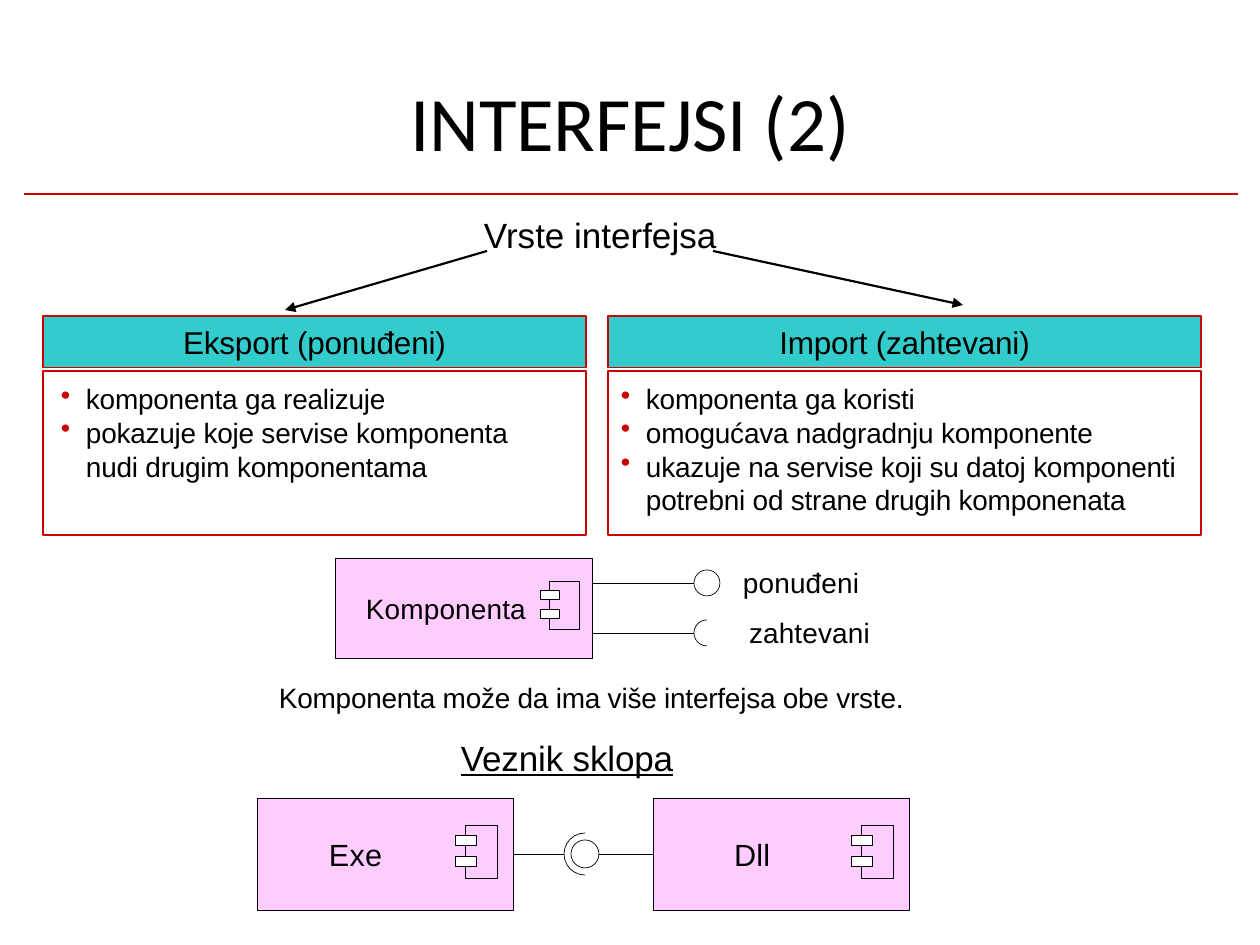
from dataclasses import dataclass

from lxml import etree
from pptx import Presentation, util as u
from pptx.dml.color import RGBColor
from pptx.enum import shapes, text
from pptx.oxml import ns

SHAPE = shapes.MSO_SHAPE
ALIGN = text.PP_ALIGN
ANCHOR = text.MSO_ANCHOR


@dataclass(frozen=True)
class Theme:
    """Colours, fonts and type sizes of the slide."""
    ink: str = "000000"
    red: str = "CC0000"
    teal: str = "33CCCC"
    pink: str = "FFCCFF"
    white: str = "FFFFFF"
    head_font: str = "Calibri"
    body_font: str = "Arial"
    title: float = 44
    subtitle: float = 20
    header: float = 18
    name: float = 17.5
    body: float = 16
    hair: float = 0.39
    frame: float = 0.72
    rule: float = 0.96
    arrow: float = 1.25


T = Theme()


def px(n):
    """Turn px into EMU."""
    return u.Emu(round(n * 914400 / 126))


def sub(parent, tag, **attrs):
    """Append a drawing element to an XML parent."""
    return etree.SubElement(parent, ns.qn(tag), attrs)


def write(sp, lines, size=T.body, font=T.body_font, align=ALIGN.LEFT, anchor=ANCHOR.TOP,
          inset=(0, 0, 0, 0), spacing=-0.1, underline=None, bullet=0, leading=None):
    """Fill a shape with formatted paragraphs."""
    tf = sp.text_frame
    tf.word_wrap = True
    tf.vertical_anchor = anchor
    tf.margin_left, tf.margin_top, tf.margin_right, tf.margin_bottom = map(px, inset)
    for i, line in enumerate(lines):
        p = tf.add_paragraph() if i else tf.paragraphs[0]
        p.alignment = align
        if leading:
            p.line_spacing = u.Pt(leading)
        if bullet:
            pPr = p._p.get_or_add_pPr()
            pPr.set("marL", str(px(bullet)))
            pPr.set("indent", str(-px(bullet)))
            sub(sub(pPr, "a:buClr"), "a:srgbClr", val=T.red)
            sub(pPr, "a:buChar", char="•")
        r = p.add_run()
        r.text = line
        r.font.size = u.Pt(size)
        r.font.name = font
        r.font.underline = underline
        r.font.color.rgb = RGBColor.from_string(T.ink)
        r._r.get_or_add_rPr().set("spc", str(round(spacing * 100)))


def label(s, box, line, **fmt):
    """Place a line of text in a box."""
    write(s.shapes.add_textbox(*map(px, box)), [line], **fmt)


def shape(s, kind, box, fill=None, line=T.ink, width=T.hair):
    """Place an outlined preset shape in a box."""
    sp = s.shapes.add_shape(kind, *map(px, box))
    sp.shadow.inherit = False
    if fill:
        sp.fill.solid()
        sp.fill.fore_color.rgb = RGBColor.from_string(fill)
    else:
        sp.fill.background()
    sp.line.color.rgb = RGBColor.from_string(line)
    sp.line.width = u.Pt(width)
    return sp


def connect(s, start, end, color=T.ink, width=T.hair, arrow=False):
    """Draw a straight connector between two points."""
    c = s.shapes.add_connector(shapes.MSO_CONNECTOR.STRAIGHT, *map(px, start + end))
    c.line.color.rgb = RGBColor.from_string(color)
    c.line.width = u.Pt(width)
    if arrow:
        sub(c.line._get_or_add_ln(), "a:tailEnd", type="triangle")
    sub(c._element.spPr, "a:effectLst")
    return c


def socket(s, box):
    """Draw the left half of a circle."""
    sp = shape(s, SHAPE.ARC, box)
    sp.adjustments[0], sp.adjustments[1] = 54, 162


def heading(s, box):
    """Place the slide title above its rule."""
    x, y, w, h = box
    label(s, (x + 39, y, w - 80, h - 27), "INTERFEJSI (2)", size=T.title, font=T.head_font,
          align=ALIGN.CENTER, anchor=ANCHOR.MIDDLE)
    connect(s, (x, y + h), (x + w, y + h), T.red, T.rule)


def kind_panel(s, box, title, items, inset):
    """Place a titled panel with a bulleted list."""
    x, y, w, h = box
    top = shape(s, SHAPE.RECTANGLE, (x, y, w, 52), T.teal, T.red, T.frame)
    write(top, [title], size=T.header, align=ALIGN.CENTER, anchor=ANCHOR.MIDDLE)
    body = shape(s, SHAPE.RECTANGLE, (x, y + 55, w, h - 55), None, T.red, T.frame)
    write(body, items, inset=inset, bullet=25, leading=19.2)


def icon(s, box):
    """Draw the component symbol."""
    x, y, w, h = box
    shape(s, SHAPE.RECTANGLE, (x + w // 4, y, w - w // 4, h))
    for fifth in (1, 3):
        shape(s, SHAPE.RECTANGLE, (x, y + h * fifth // 5, w // 2, h // 5), T.white)


def component(s, box, name, indent, symbol, size=T.name):
    """Place a named component with its symbol offset inside the box."""
    x, y, w, h = box
    dx, dy, iw, ih = symbol
    sp = shape(s, SHAPE.RECTANGLE, box, T.pink)
    write(sp, [name], size=size, anchor=ANCHOR.MIDDLE, inset=(indent, 0, 0, 0), spacing=0.1)
    icon(s, (x + dx, y + dy, iw, ih))
    return sp


def interfaces(s, box):
    """Place a component with a provided and a required interface."""
    x, y, w, h = box
    component(s, (x, y, 257, h), "Komponenta", 31, (205, 23, 39, 48), T.body)
    for dy, name, dx in ((25, "ponuđeni", 408), (75, "zahtevani", 414)):
        connect(s, (x + 257, y + dy), (x + 359, y + dy))
        end = (x + 359, y + dy - 13, 26, 26)
        if dy == 25:
            shape(s, SHAPE.OVAL, end)
        else:
            socket(s, end)
        label(s, (x + dx, y + dy - 17, w - dx, 34), name, spacing=0.1)


def assembly(s, box):
    """Place two components joined by an assembly connector."""
    x, y, w, h = box
    mid, side = y + h // 2, 256
    symbol = (198, 27, 42, 53)
    exe = component(s, (x, y, side, h), "Exe", 72, symbol)
    dll = component(s, (x + w - side, y, side, h), "Dll", 81, symbol)
    socket(s, (x + 307, mid - 21, 42, 42))
    shape(s, SHAPE.OVAL, (x + 314, mid - 14, 28, 28))
    connect(s, (x + side, mid), (x + 307, mid)).begin_connect(exe, 3)
    connect(s, (x + 342, mid), (x + w - side, mid)).end_connect(dll, 1)


def main():
    """Build and save the slide."""
    prs = Presentation()
    prs.slide_width, prs.slide_height = u.Inches(10), u.Inches(7.5)
    s = prs.slides.add_slide(prs.slide_layouts[6])
    heading(s, (24, 74, 1214, 120))
    label(s, (484, 213, 240, 42), "Vrste interfejsa", size=T.subtitle, spacing=0)
    for start, end in (((487, 251), (285, 310)), ((713, 251), (963, 305))):
        connect(s, start, end, width=T.arrow, arrow=True)
    kind_panel(s, (43, 316, 543, 219), "Eksport (ponuđeni)",
               ["komponenta ga realizuje",
                "pokazuje koje servise komponenta nudi drugim komponentama"], (18, 11, 50, 0))
    kind_panel(s, (608, 316, 593, 219), "Import (zahtevani)",
               ["komponenta ga koristi", "omogućava nadgradnju komponente",
                "ukazuje na servise koji su datoj komponenti potrebni od strane drugih komponenata"],
               (13, 11, 4, 0))
    interfaces(s, (335, 558, 560, 100))
    label(s, (279, 681, 660, 36), "Komponenta može da ima više interfejsa obe vrste.")
    label(s, (461, 736, 240, 42), "Veznik sklopa", size=T.subtitle, underline=True)
    assembly(s, (257, 798, 652, 112))
    prs.save("out.pptx")


if __name__ == "__main__":
    main()
